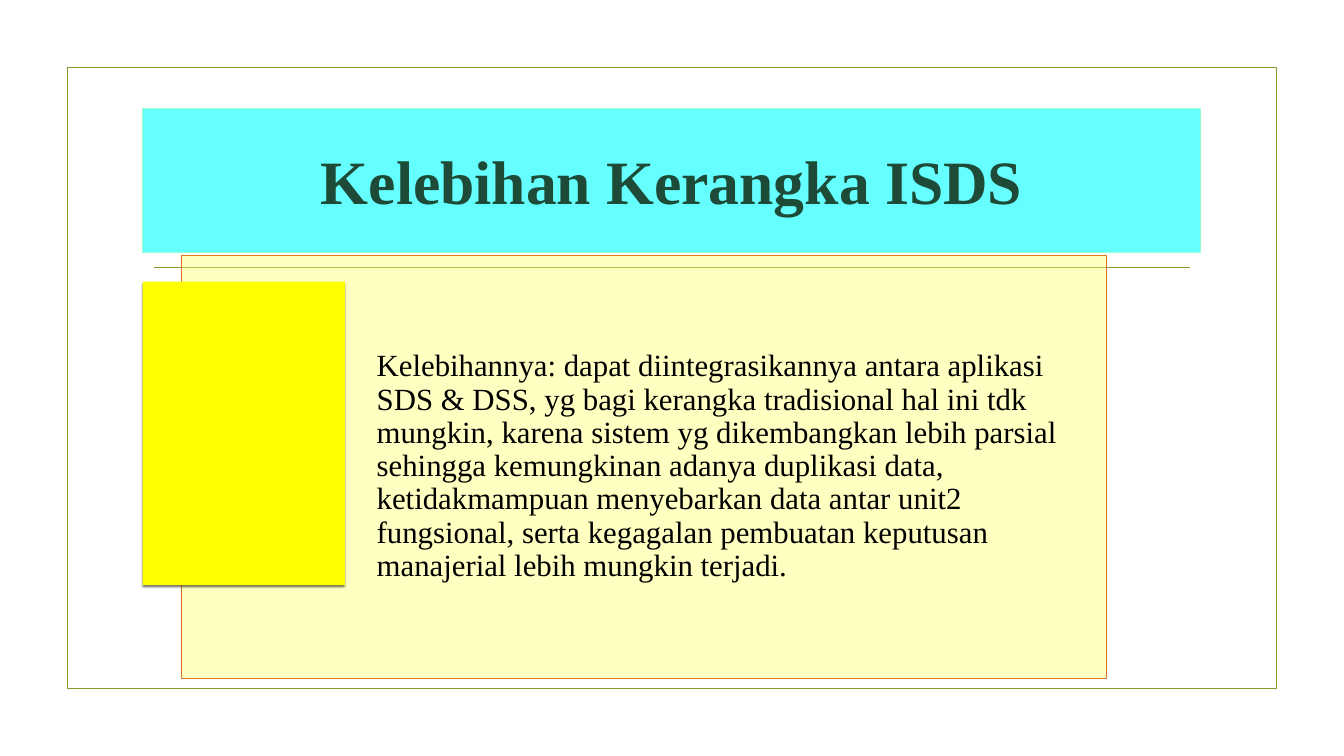
from lxml.etree import SubElement
from pptx import Presentation
from pptx.dml.color import RGBColor
from pptx.enum.shapes import MSO_CONNECTOR, MSO_SHAPE
from pptx.enum.text import MSO_ANCHOR, MSO_AUTO_SIZE, PP_ALIGN
from pptx.oxml import parse_xml
from pptx.oxml.ns import nsdecls, qn
from pptx.util import Cm, Pt

OLIVE = RGBColor(0x83, 0x99, 0x2A)
CYAN = RGBColor(0x66, 0xFF, 0xFF)
MINT = RGBColor(0x99, 0xFF, 0xCC)
DARK_GREEN = RGBColor(0x1E, 0x4B, 0x38)
PALE_YELLOW = RGBColor(0xFF, 0xFF, 0x66)
YELLOW = RGBColor(0xFF, 0xFF, 0x00)
ORANGE = RGBColor(0xD9, 0x78, 0x28)
BLACK = RGBColor(0, 0, 0)
FONT = "Times New Roman"

TITLE = "Kelebihan Kerangka ISDS"
ADVANTAGE = (
    "Kelebihannya: dapat diintegrasikannya antara aplikasi SDS & DSS, "
    "yg bagi kerangka tradisional hal ini tdk mungkin, karena sistem yg "
    "dikembangkan lebih parsial sehingga kemungkinan adanya duplikasi data, "
    "ketidakmampuan menyebarkan data antar unit2 fungsional, serta kegagalan "
    "pembuatan keputusan manajerial lebih mungkin terjadi."
)


def style_box(shape, fill=None, line=None, line_width=0.75):
    if fill is None:
        shape.fill.background()
    else:
        shape.fill.solid()
        shape.fill.fore_color.rgb = fill
    if line is None:
        shape.line.fill.background()
    else:
        shape.line.color.rgb = line
        shape.line.width = Pt(line_width)


def add_box(slide, left, top, width, height, **style):
    shape = slide.shapes.add_shape(
        MSO_SHAPE.RECTANGLE, Cm(left), Cm(top), Cm(width), Cm(height))
    shape.shadow.inherit = False
    style_box(shape, **style)
    return shape


def add_run(paragraph, text, size, color, bold=False):
    run = paragraph.add_run()
    run.text = text
    run.font.name = FONT
    run.font.size = Pt(size)
    run.font.bold = bold
    run.font.color.rgb = color


def add_frame(slide, left, top, width, height):
    # Border around the slide and the rule below the title
    add_box(slide, left, top, width, height, line=OLIVE, line_width=1.25)
    rule_margin, rule_top = 4.36, top + 10.08
    rule = slide.shapes.add_connector(
        MSO_CONNECTOR.STRAIGHT,
        Cm(left + rule_margin), Cm(rule_top),
        Cm(left + width - rule_margin), Cm(rule_top))
    rule.line.color.rgb = OLIVE
    rule.line.width = Pt(1.25)
    SubElement(rule._element.spPr, qn("a:effectLst"))


def add_title(slide, left, top, width, height):
    title = slide.shapes.title
    title.left, title.top = Cm(left), Cm(top)
    title.width, title.height = Cm(width), Cm(height)
    style_box(title, fill=CYAN, line=MINT)
    frame = title.text_frame
    frame.auto_size = MSO_AUTO_SIZE.NONE
    frame.word_wrap = True
    frame.vertical_anchor = MSO_ANCHOR.MIDDLE
    paragraph = frame.paragraphs[0]
    paragraph.alignment = PP_ALIGN.CENTER
    add_run(paragraph, TITLE, 88, DARK_GREEN, bold=True)


def add_advantage(slide, left, top, width, height):
    # Translucent panel with the text
    panel = add_box(slide, left, top, width, height,
                    fill=PALE_YELLOW, line=ORANGE)
    color = panel._element.spPr.find(qn("a:solidFill"))[0]
    SubElement(color, qn("a:alpha"), val="40000")
    frame = panel.text_frame
    frame.word_wrap = True
    frame.vertical_anchor = MSO_ANCHOR.MIDDLE
    frame.margin_left = Cm(9.86)
    frame.margin_top = frame.margin_right = frame.margin_bottom = Cm(0.46)
    paragraph = frame.paragraphs[0]
    paragraph.alignment = PP_ALIGN.LEFT
    paragraph.line_spacing = 0.9
    add_run(paragraph, ADVANTAGE, 44, BLACK)

    # Yellow block overlapping the left edge, with a soft shadow
    block = add_box(slide, left - 1.93, top + 1.35, 10.19, 15.29, fill=YELLOW)
    effects = block._element.spPr.find(qn("a:effectLst"))
    effects.append(parse_xml(
        f'<a:outerShdw {nsdecls("a")} blurRad="{int(Pt(3))}" '
        f'dist="{int(Pt(2))}" dir="5400000" algn="ctr" rotWithShape="0">'
        '<a:srgbClr val="000000"><a:alpha val="60000"/></a:srgbClr>'
        '</a:outerShdw>'))


def main():
    presentation = Presentation()
    presentation.slide_width, presentation.slide_height = Cm(67.72), Cm(38.1)
    slide = presentation.slides.add_slide(presentation.slide_layouts[5])
    add_frame(slide, 3.38, 3.38, 60.93, 31.32)
    add_title(slide, 7.19, 5.46, 53.31, 7.24)
    add_advantage(slide, 9.12, 12.85, 46.61, 21.34)
    presentation.save("out.pptx")


if __name__ == "__main__":
    main()
